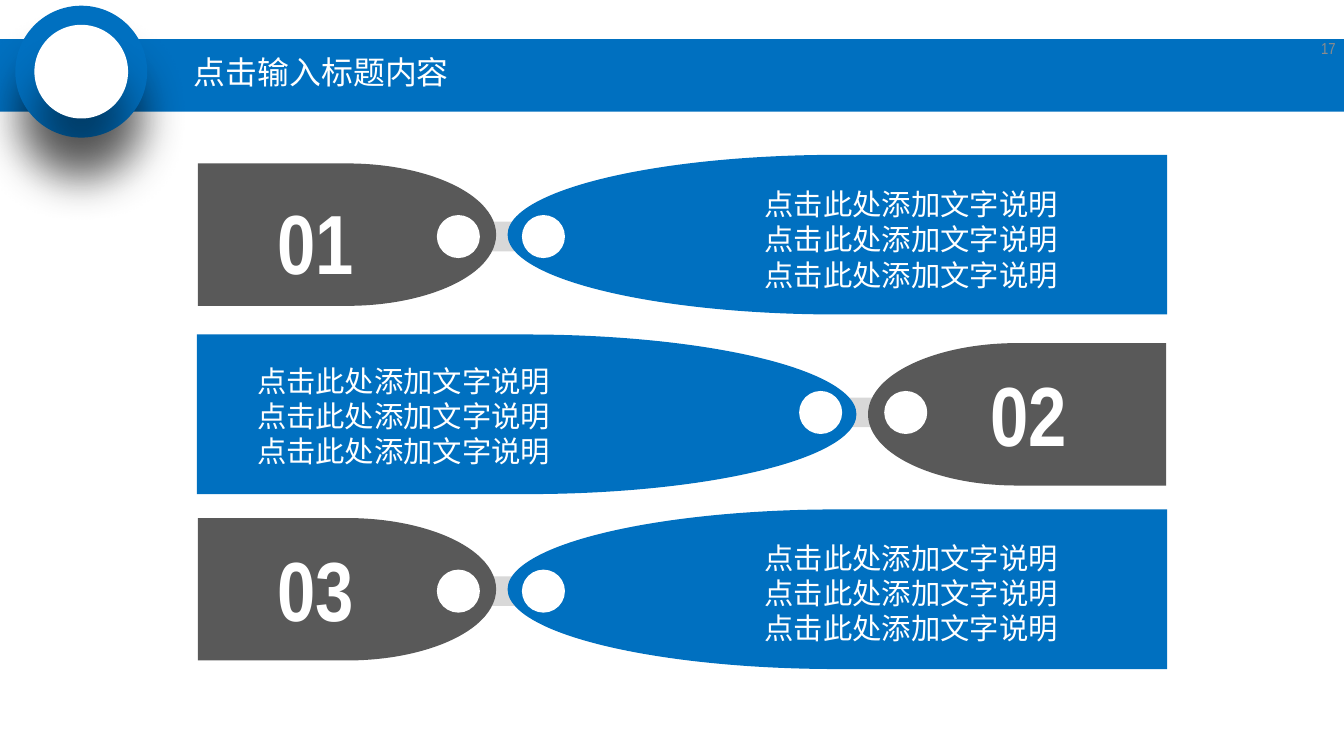
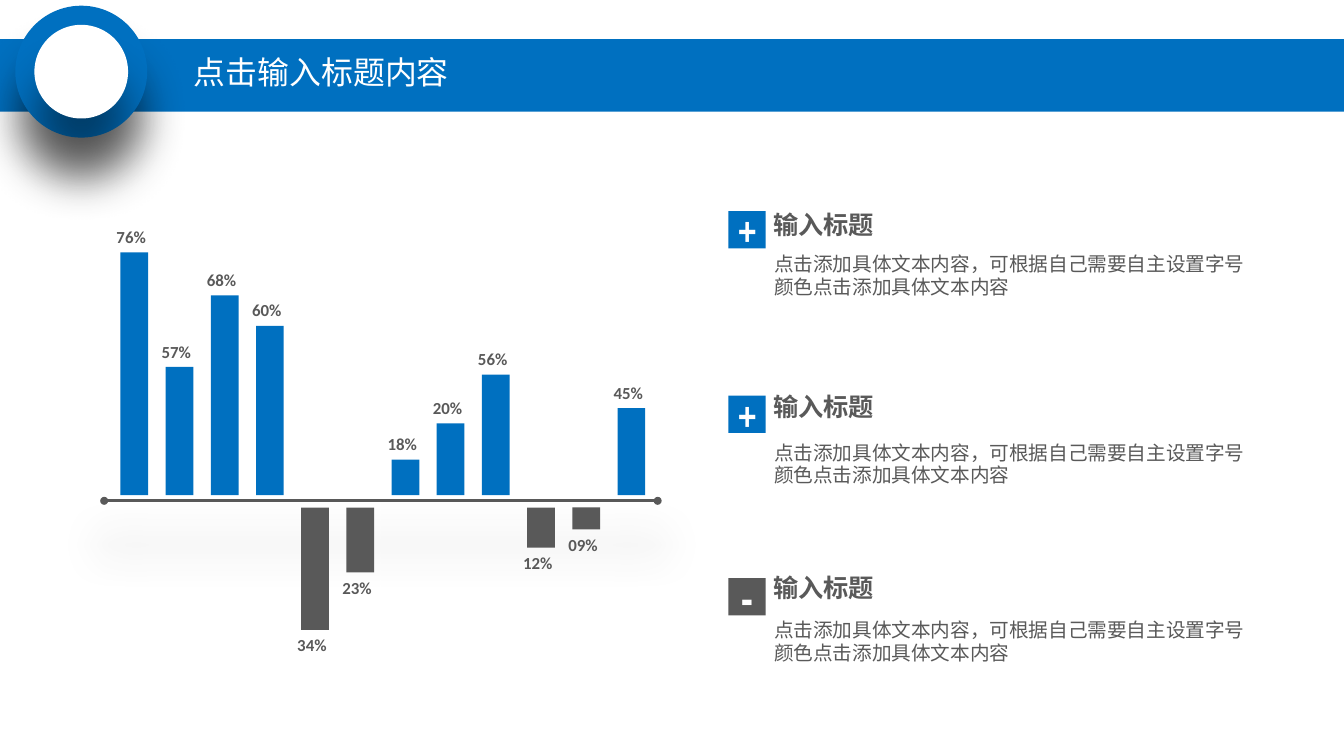
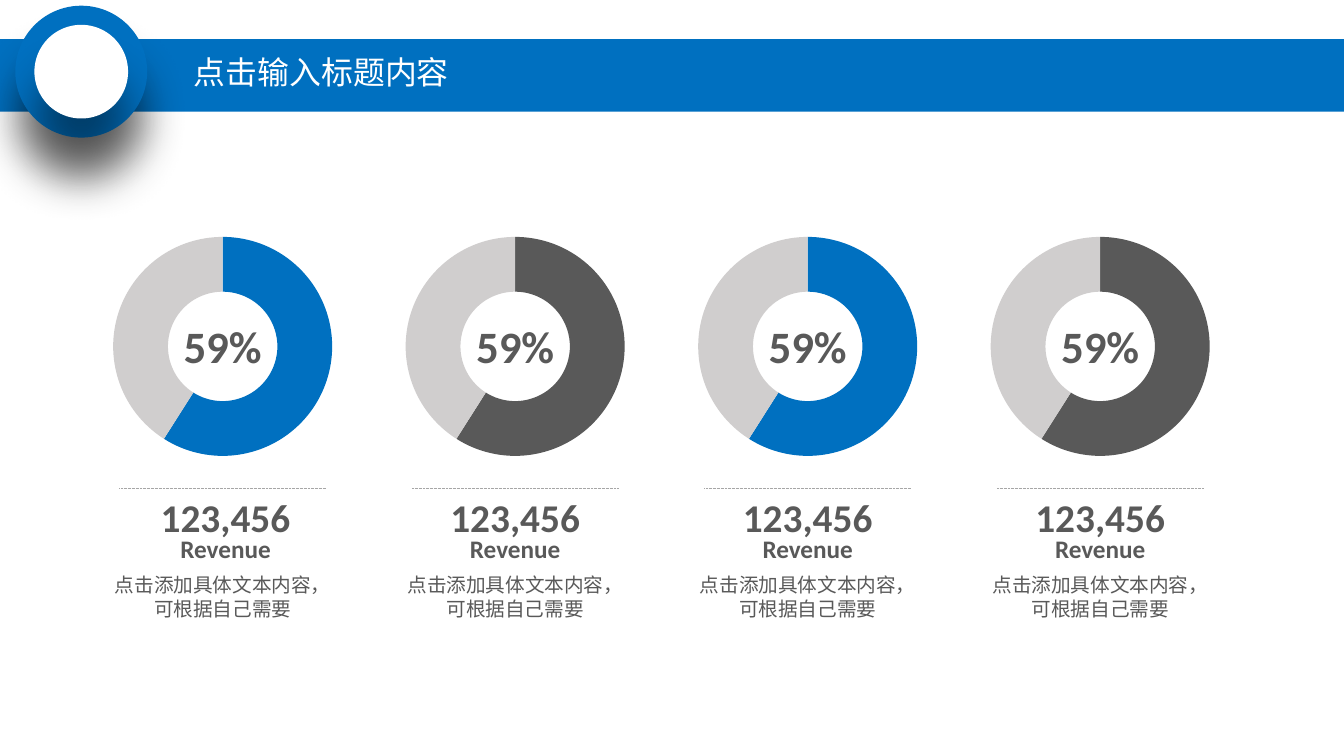
from lxml import etree
from pptx import Presentation, util as u
from pptx.chart.data import CategoryChartData
from pptx.dml.color import RGBColor
from pptx.enum import chart as charts, dml, shapes, text
from pptx.oxml import parse_xml
from pptx.oxml.ns import nsdecls, qn

BLUE, GRAY, WHITE = "0070C0", "595959", "FFFFFF"
NARROW, CALIBRI = "Arial Narrow", "Calibri"
LEFT, CENTER, RIGHT = text.PP_ALIGN.LEFT, text.PP_ALIGN.CENTER, text.PP_ALIGN.RIGHT
MIDDLE, TOP = text.MSO_ANCHOR.MIDDLE, text.MSO_ANCHOR.TOP
KIND = shapes.MSO_SHAPE
STRAIGHT = shapes.MSO_CONNECTOR.STRAIGHT


def paint(sp, fill=None, line=None, width=1, shadow=False):
    """Set fill, line and shadow of a shape or connector."""
    if fill:
        sp.fill.solid()
        sp.fill.fore_color.rgb = RGBColor.from_string(fill)
    if line:
        sp.line.color.rgb = RGBColor.from_string(line)
        sp.line.width = u.Pt(width)
    else:
        sp.line.fill.background()
    effects = etree.SubElement(sp._element.spPr, qn("a:effectLst"))
    if shadow:
        effects.append(parse_xml(
            f'<a:outerShdw {nsdecls("a")} blurRad="{u.Pt(33)}" dist="{u.Pt(33)}" '
            'dir="5400000" algn="t" rotWithShape="0"><a:srgbClr val="000000">'
            '<a:alpha val="43000"/></a:srgbClr></a:outerShdw>'))
    return sp


def write(sp, *lines, size, font=CALIBRI, color=GRAY, bold=False, align=LEFT,
          anchor=TOP, wrap=True, spacing=None, before=None):
    """Write one paragraph per line; top-anchored boxes grow with their text."""
    tf = sp.text_frame
    tf.word_wrap = wrap
    tf.vertical_anchor = anchor
    if anchor == TOP:
        tf.auto_size = text.MSO_AUTO_SIZE.SHAPE_TO_FIT_TEXT
    for i, line in enumerate(lines):
        p = tf.add_paragraph() if i else tf.paragraphs[0]
        p.alignment = align
        p.line_spacing = spacing
        p.space_before = before
        r = p.add_run()
        r.text = line
        r.font.size = u.Pt(size)
        r.font.name = font
        r.font.bold = bold
        r.font.color.rgb = RGBColor.from_string(color)


prs = Presentation()
prs.slide_width, prs.slide_height = u.Inches(14.06), u.Inches(7.91)

# Shared band, ring and title
for _ in range(3):
    s = prs.slides.add_slide(prs.slide_layouts[6])
    band = s.shapes.add_shape(KIND.RECTANGLE, 0, u.Inches(0.41), prs.slide_width, u.Inches(0.76))
    paint(band, BLUE)
    for x, y, d, color in ((0.16, 0.06, 1.38, BLUE), (0.36, 0.26, 0.98, WHITE)):
        ring = s.shapes.add_shape(KIND.OVAL, *map(u.Inches, (x, y, d, d)))
        paint(ring, color, shadow=True)
    title = s.shapes.add_textbox(*map(u.Inches, (1.93, 0.5, 3.47, 0.55)))
    write(title, "点击输入标题内容", size=24, font=NARROW, color=WHITE,
          anchor=MIDDLE, spacing=0.9, before=u.Pt(10))
steps, bars, rings = prs.slides

# Slide 1: three linked rows, the second one mirrored
s = steps
SPAN = 14.27  # left edge plus right edge of the rows
rows = [  # number, top, dot top, number box, description box
    ("01", 1.62, 2.25, (2.8, 1.94, 1.6, 1.17), (7.9, 1.9, 3.92, 1.22)),
    ("02", 3.5, 4.09, (10.26, 3.75, 1.3, 1.17), (2.59, 3.75, 4.25, 1.22)),
    ("03", 5.33, 5.96, (2.8, 5.58, 1.6, 1.17), (7.9, 5.6, 4.04, 1.22)),
]
for number, top, dot_top, number_box, note_box in rows:
    mirrored = number == "02"
    parts = [  # kind, left, top, width, height, colour, points left
        (KIND.FLOWCHART_TERMINATOR, 4.6, dot_top + 0.07, 1.31, 0.31, "D8D8D8", False),
        (KIND.FLOWCHART_DELAY, 2.07, top + 0.09, 3.12, 1.49, GRAY, False),
        (KIND.FLOWCHART_DELAY, 5.31, top, 6.9, 1.67, BLUE, True),
        (KIND.FLOWCHART_CONNECTOR, 4.57, dot_top, 0.45, 0.45, WHITE, False),
        (KIND.FLOWCHART_CONNECTOR, 5.46, dot_top, 0.45, 0.45, WHITE, False),
    ]
    for kind, x, y, w, h, color, points_left in parts:
        if mirrored:
            x = SPAN - x - w
        sp = paint(s.shapes.add_shape(kind, *map(u.Inches, (x, y, w, h))), color)
        sp.rotation = 180 if points_left != mirrored else 0
    write(s.shapes.add_textbox(*map(u.Inches, number_box)), number,
          size=63.2, font=NARROW, color=WHITE, bold=True)
    write(s.shapes.add_textbox(*map(u.Inches, note_box)), *["点击此处添加文字说明"] * 3,
          size=22.1, font=NARROW, color=WHITE)
write(s.shapes.add_textbox(*map(u.Inches, (13.38, 0.29, 0.69, 0.42))), "17",
      size=12, font=NARROW, color="8C8C8C", align=RIGHT, anchor=MIDDLE)

# Slide 2: axis with round ends
s = bars
axis = s.shapes.add_connector(STRAIGHT, *map(u.Inches, (1.09, 5.24, 6.88, 5.24)))
paint(axis, line=GRAY, width=2, shadow=True)
for end in ("a:headEnd", "a:tailEnd"):
    etree.SubElement(axis.line._get_or_add_ln(), qn(end), type="oval")

# Bars: label and height, negative below the axis
heights = [("76%", 2.54), ("57%", 1.34), ("68%", 2.09), ("60%", 1.77),
           ("34%", -1.28), ("23%", -0.68), ("18%", 0.37), ("20%", 0.75),
           ("56%", 1.26), ("12%", -0.42), ("09%", -0.23), ("45%", 0.91)]
for i, (label, h) in enumerate(heights):
    x = 1.26 + 5.2 * i / 11
    y, label_y = (5.18 - h, 4.86 - h) if h > 0 else (5.31, 5.31 - h)
    bar = s.shapes.add_shape(KIND.RECTANGLE, *map(u.Inches, (x, y, 0.29, abs(h))))
    paint(bar, BLUE if h > 0 else GRAY)
    write(s.shapes.add_textbox(*map(u.Inches, (x - 0.14, label_y, 0.51, 0.31))), label,
          size=12.7, bold=True, wrap=False)

# Legend: sign, size, colour, tops of badge, heading and note
legend = [("+", 29.6, BLUE, 2.21, 2.14, 2.6),
          ("+", 29.6, BLUE, 4.14, 4.04, 4.57),
          ("-", 33.8, GRAY, 6.05, 5.94, 6.43)]
for sign, size, color, badge_y, head_y, note_y in legend:
    badge = s.shapes.add_shape(KIND.RECTANGLE, *map(u.Inches, (7.62, badge_y, 0.39, 0.39)))
    write(paint(badge, color), sign, size=size, font=NARROW, color=WHITE, bold=True,
          align=CENTER, anchor=MIDDLE)
    write(s.shapes.add_textbox(*map(u.Inches, (7.99, head_y, 1.27, 0.42))), "输入标题",
          size=19, bold=True, wrap=False)
    write(s.shapes.add_textbox(*map(u.Inches, (8, note_y, 5.21, 0.58))),
          "点击添加具体文本内容，可根据自己需要自主设置字号颜色点击添加具体文本内容",
          size=14.8, spacing=u.Pt(16.9))

# Slide 3: four doughnut columns
s = rings
data = CategoryChartData()
data.categories = ["1", "2"]
data.add_series("Series 1", (59, 41))
for i, color in enumerate((BLUE, GRAY) * 2):
    x = 0.42 + 3.06 * i
    chart = s.shapes.add_chart(charts.XL_CHART_TYPE.DOUGHNUT,
                               *map(u.Inches, (x, 2.35, 3.82, 2.55)), data).chart
    chart.has_legend = chart.has_title = False
    chart.font.size, chart.font.name = u.Pt(10), NARROW
    chart.font.color.rgb = RGBColor.from_string("000000")
    for j, point_color in enumerate((color, "D0CECE")):
        fmt = chart.plots[0].series[0].points[j].format
        fmt.fill.solid()
        fmt.fill.fore_color.rgb = RGBColor.from_string(point_color)
        fmt.line.fill.background()

    # Hole size and a centred plot area
    area = chart._chartSpace.chart.plotArea
    for hole in area.iter(qn("c:holeSize")):
        hole.set("val", "79")
    for old in area.findall(qn("c:layout")):
        area.remove(old)
    layout = parse_xml(f'<c:layout {nsdecls("c")}><c:manualLayout/></c:layout>')
    for tag, val in (("layoutTarget", "inner"), ("xMode", "edge"), ("yMode", "edge"),
                     ("x", "0.2"), ("y", "0.05"), ("w", "0.6"), ("h", "0.9")):
        etree.SubElement(layout[0], qn(f"c:{tag}"), val=val)
    area.insert(0, layout)

    rule = s.shapes.add_connector(STRAIGHT, *map(u.Inches, (x + 0.83, 5.11, x + 2.99, 5.11)))
    paint(rule, line="A6A6A6", width=0.5)
    rule.line.dash_style = dml.MSO_LINE.ROUND_DOT

    mid = x + 1.91
    figure_mid = mid if i else mid + 0.03
    captions = [  # text, centre, top, width, height, size, bold, wrap
        ("59%", mid, 3.29, 1.03, 0.67, 33.8, True, False),
        ("123,456", figure_mid, 5.11, 1.8, 0.6, 29.6, True, True),
        ("Revenue", figure_mid, 5.53, 1.16, 0.42, 19, True, False),
        ("点击添加具体文本内容，可根据自己需要", mid, 5.95, 2.54, 0.6, 14.8, False, True),
    ]
    for caption, cx, y, w, h, size, bold, wrap in captions:
        write(s.shapes.add_textbox(*map(u.Inches, (cx - w / 2, y, w, h))), caption,
              size=size, bold=bold, align=CENTER, wrap=wrap)

prs.save("out.pptx")
